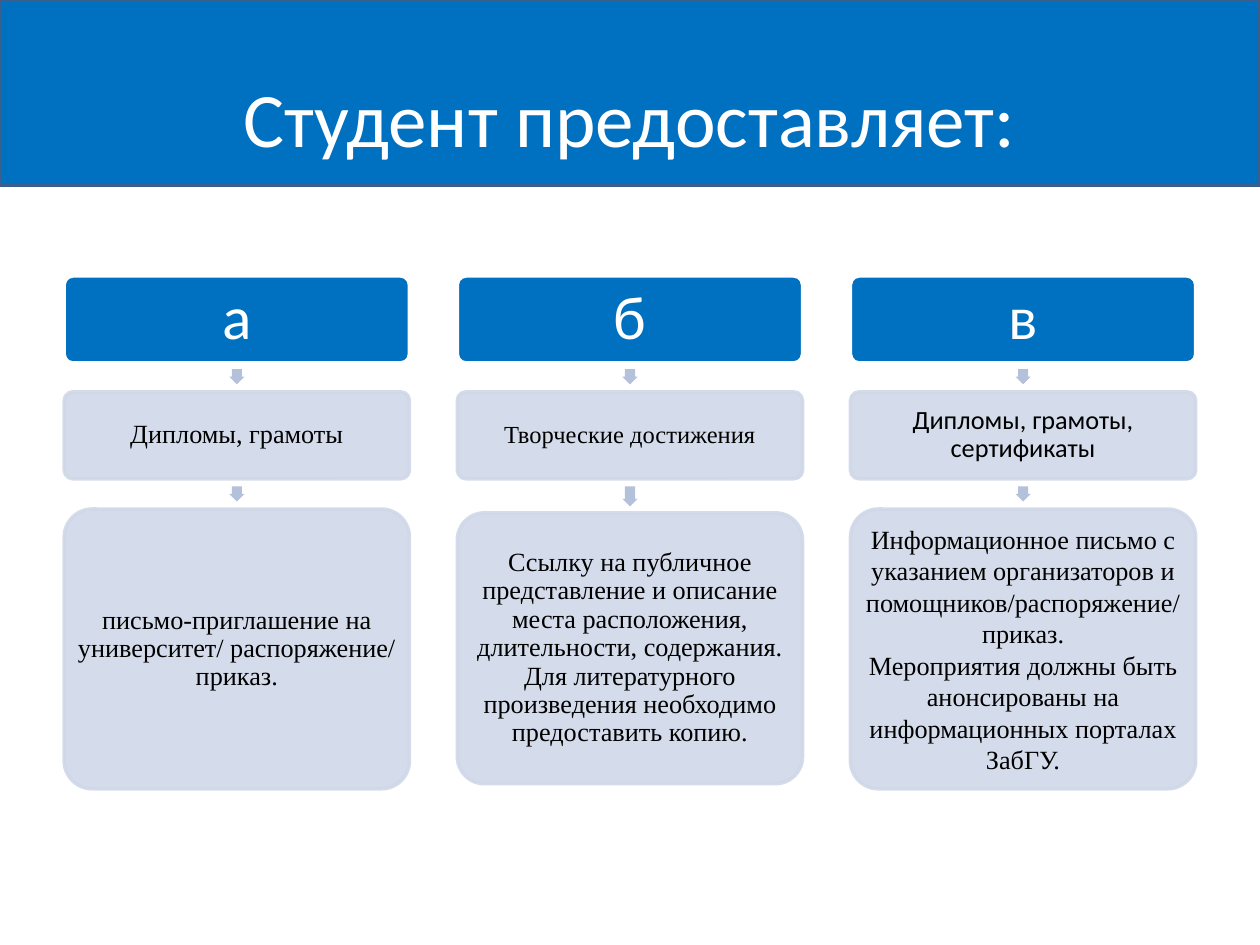
from lxml import etree
from pptx import Presentation
from pptx.dml.color import RGBColor
from pptx.enum.shapes import MSO_SHAPE
from pptx.enum.text import MSO_ANCHOR, PP_ALIGN
from pptx.oxml.ns import qn
from pptx.util import Inches, Pt

RECT, ROUND, ARROW = MSO_SHAPE.RECTANGLE, MSO_SHAPE.ROUNDED_RECTANGLE, MSO_SHAPE.RIGHT_ARROW
MIDDLE, CENTER = MSO_ANCHOR.MIDDLE, PP_ALIGN.CENTER
SANS, SERIF = "Calibri", "Times New Roman"
BLUE, PALE, WHITE, BLACK = "0070C0", "D0D8E8", "FFFFFF", "000000"

TITLE = "Студент предоставляет:"
COLUMNS = [
    {"head": "a",
     "proof": ("Дипломы, грамоты", 15, SERIF),
     "detail": ["письмо-приглашение на университет/ распоряжение/ приказ."],
     "space": 0.9, "top": 4.04, "tall": 2.22, "long": 0.12},
    {"head": "б",
     "proof": ("Творческие достижения", 14, SERIF),
     "detail": ["Ссылку на публичное представление и описание места расположения, "
                "длительности, содержания. Для литературного произведения "
                "необходимо предоставить копию."],
     "space": 0.9, "top": 4.07, "tall": 2.15, "long": 0.16},
    {"head": "в",
     "proof": ("Дипломы, грамоты, сертификаты", 15, SANS),
     "detail": ["Информационное письмо с указанием организаторов и "
                "помощников/распоряжение/ приказ.",
                "Мероприятия должны быть анонсированы на информационных порталах ЗабГУ."],
     "space": 1.0, "top": 4.04, "tall": 2.22, "long": 0.12},
]
LEFT, STEP, WIDE, HIGH = 0.51, 3.12, 2.74, 0.69
HEAD, PROOF, THICK = 2.19, 3.11, 0.12

deck = Presentation()
deck.slide_width, deck.slide_height = Inches(10), Inches(7.5)
slide = deck.slides.add_slide(deck.slide_layouts[6])


def tint(fill, color, alpha=100):
    fill.solid()
    fill.fore_color.rgb = RGBColor.from_string(color)
    if alpha < 100:
        node = fill._xPr.find(qn("a:solidFill"))[0]
        etree.SubElement(node, qn("a:alpha")).set("val", str(alpha * 1000))


def draw(kind, box, color, edge=None, alpha=100):
    shape = slide.shapes.add_shape(kind, *map(Inches, box))
    shape.shadow.inherit = False
    tint(shape.fill, color, alpha)
    if edge:
        tint(shape.line.fill, edge, alpha)
        shape.line.width = Pt(2)
    else:
        shape.line.fill.background()
    return shape


def write(shape, lines, size, face, color, inset, space=0.9):
    frame = shape.text_frame
    form = {"word_wrap": True, "vertical_anchor": MIDDLE}
    for side in ("left", "right", "top", "bottom"):
        form["margin_" + side] = Inches(inset)
    for key, value in form.items():
        setattr(frame, key, value)
    frame.text = "\n".join(lines)
    for para in frame.paragraphs:
        para.alignment, para.line_spacing = CENTER, space
        for key, value in {"size": Pt(size), "name": face}.items():
            setattr(para.font, key, value)
        para.font.color.rgb = RGBColor.from_string(color)


def card(left, top, tall, color, edge, alpha=100):
    shape = draw(ROUND, (left, top, WIDE, tall), color, edge, alpha)
    shape.adjustments[0] = 0.1
    return shape


def point(mid, top, long):
    y = top + (long - THICK) / 2
    arrow = draw(ARROW, (mid - long / 2, y, long, THICK), "B3C1DB")
    arrow.rotation = 90
    arrow.adjustments[0], arrow.adjustments[1] = 0.67, 0.5


draw(RECT, (0, 0, 10, 1.47), BLUE, "3A5F8C")
title = slide.shapes.add_textbox(*map(Inches, (0.5, 0.3, 9, 1.25)))
write(title, [TITLE], 44, SANS, WHITE, 0.05, 1.0)

for i, col in enumerate(COLUMNS):
    left = LEFT + i * STEP
    mid = left + WIDE / 2
    write(card(left, HEAD, HIGH, BLUE, WHITE), [col["head"]], 35, SANS, WHITE, 0.05)
    point(mid, HEAD + HIGH + 0.05, THICK)
    text, size, face = col["proof"]
    write(card(left, PROOF, HIGH, PALE, PALE, 90), [text], size, face, BLACK, 0.02)
    point(mid, PROOF + HIGH + 0.06, col["long"])
    write(card(left, col["top"], col["tall"], PALE, PALE, 90),
          col["detail"], 15, SERIF, BLACK, 0.02, col["space"])

deck.save("out.pptx")
